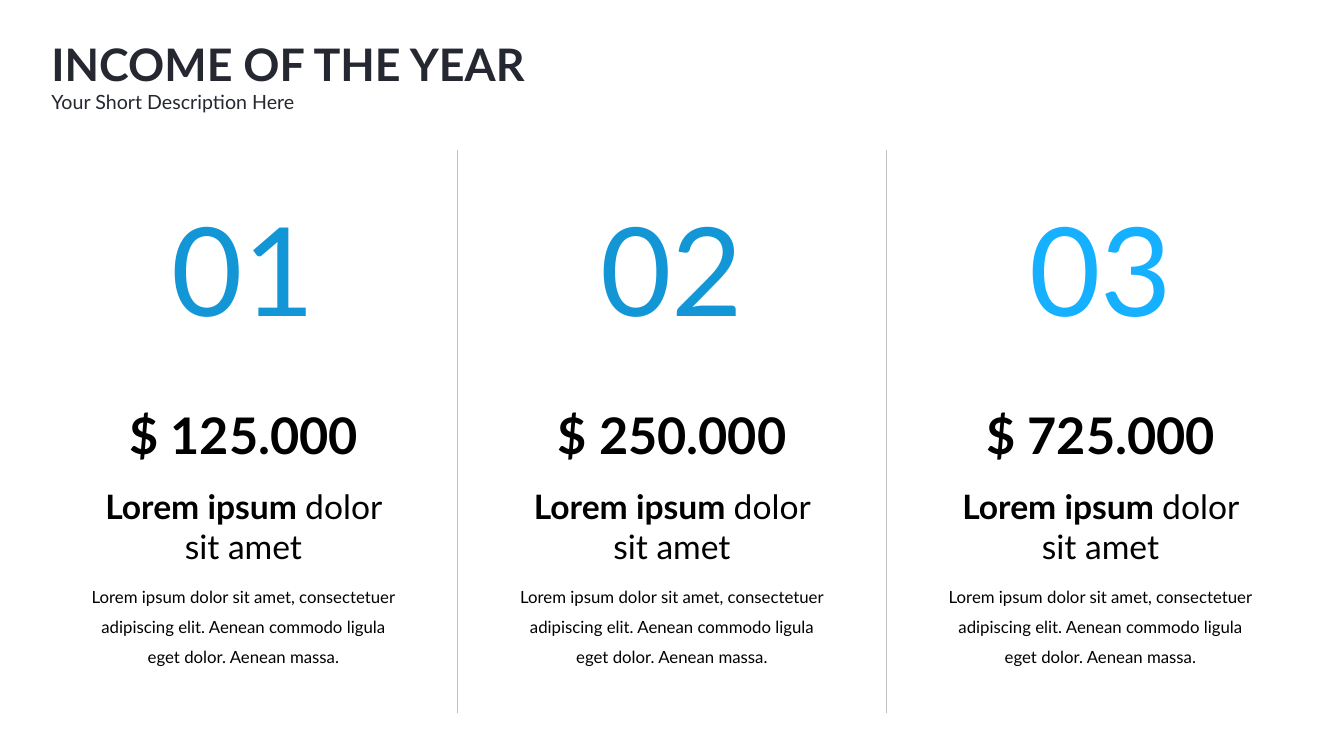
from dataclasses import dataclass

from lxml.etree import SubElement
from pptx import Presentation
from pptx.dml.color import RGBColor
from pptx.enum.shapes import MSO_CONNECTOR
from pptx.enum.text import MSO_ANCHOR, MSO_AUTO_SIZE, PP_ALIGN
from pptx.oxml.ns import qn
from pptx.shapes.base import BaseShape
from pptx.slide import Slide
from pptx.text.text import Font
from pptx.util import Inches, Pt

BLACK, DARK, GREY = "000000", "252731", "BFBFBF"
BLUE, BRIGHT = "1296D6", "15B0FF"
LEFT, WIDTH, PITCH = 0.81, 3.21, 4.25
LEAD, REST = "Lorem ipsum ", "dolor sit amet"
BODY = ("Lorem ipsum dolor sit amet, consectetuer adipiscing elit. "
        "Aenean commodo ligula eget dolor. Aenean massa.")


@dataclass
class Income:
    number: str
    amount: str
    color: str


@dataclass
class Row:
    top: float
    height: float
    size: int
    bold: bool = False
    spacing: float = 1.0
    wrap: bool = True


NUMBER = Row(1.87, 1.58, 88, wrap=False)
AMOUNT = Row(3.96, 0.71, 36, bold=True)
HEADING = Row(4.77, 0.91, 24)
DETAIL = Row(5.67, 1.01, 12, spacing=1.5)

INCOMES = [
    Income("01", "$ 125.000", BLUE),
    Income("02", "$ 250.000", BLUE),
    Income("03", "$ 725.000", BRIGHT),
]


def rgb(color: str) -> RGBColor:
    return RGBColor.from_string(color)


def style(font: Font, size: int, color: str, bold: bool = False) -> None:
    font.name = "Lato"
    font.size = Pt(size)
    font.bold = bold
    font.color.rgb = rgb(color)


def add_text(slide: Slide, left: float, row: Row, parts: list[str],
             color: str = BLACK) -> None:
    """Add a centred box; when there are two parts, the first is bold."""
    width = WIDTH if row.wrap else 1.63
    left += (WIDTH - width) / 2
    box = slide.shapes.add_textbox(
        Inches(left), Inches(row.top), Inches(width), Inches(row.height))
    frame = box.text_frame
    frame.word_wrap = row.wrap
    frame.auto_size = MSO_AUTO_SIZE.SHAPE_TO_FIT_TEXT
    para = frame.paragraphs[0]
    para.alignment = PP_ALIGN.CENTER
    para.line_spacing = row.spacing
    style(para.font, row.size, color, row.bold)
    for part in parts:
        para.add_run().text = part
    if len(parts) > 1:
        para.runs[0].font.bold = True


def add_divider(slide: Slide, left: float) -> None:
    line = slide.shapes.add_connector(
        MSO_CONNECTOR.STRAIGHT,
        Inches(left), Inches(1.49), Inches(left), Inches(7.07))
    line.line.color.rgb = rgb(GREY)
    line.line.width = Pt(1)
    SubElement(line._element.spPr, qn("a:effectLst"))


def fill_holder(holder: BaseShape, text: str, top: float, height: float,
                size: int, bold: bool, anchor: MSO_ANCHOR) -> None:
    """Move a placeholder into the header and set its text, without bullet."""
    holder.left, holder.top = Inches(0.41), Inches(top)
    holder.width, holder.height = Inches(6.26), Inches(height)
    frame = holder.text_frame
    frame.text = text
    frame.vertical_anchor = anchor
    frame.auto_size = MSO_AUTO_SIZE.NONE
    para = frame.paragraphs[0]
    props = para._p.get_or_add_pPr()
    props.set("marL", "0")
    props.set("indent", "0")
    SubElement(props, qn("a:buNone"))
    para.alignment = PP_ALIGN.LEFT
    para.space_before = Pt(0)
    para.line_spacing = 1.0 if bold else 0.9
    style(para.font, size, DARK, bold)


def main() -> None:
    deck = Presentation()
    deck.slide_width, deck.slide_height = Inches(13.33), Inches(7.5)
    slide = deck.slides.add_slide(deck.slide_layouts[1])
    fill_holder(slide.shapes.title, "INCOME OF THE YEAR",
                0.28, 0.7, 32, True, MSO_ANCHOR.MIDDLE)
    fill_holder(slide.placeholders[1], "Your Short Description Here",
                0.87, 0.33, 14, False, MSO_ANCHOR.TOP)
    for index, income in enumerate(INCOMES):
        left = LEFT + index * PITCH
        if index:
            add_divider(slide, left - 0.52)
        add_text(slide, left, NUMBER, [income.number], income.color)
        add_text(slide, left, AMOUNT, [income.amount])
        add_text(slide, left, HEADING, [LEAD, REST])
        add_text(slide, left, DETAIL, [BODY])
    deck.save("out.pptx")


if __name__ == "__main__":
    main()
